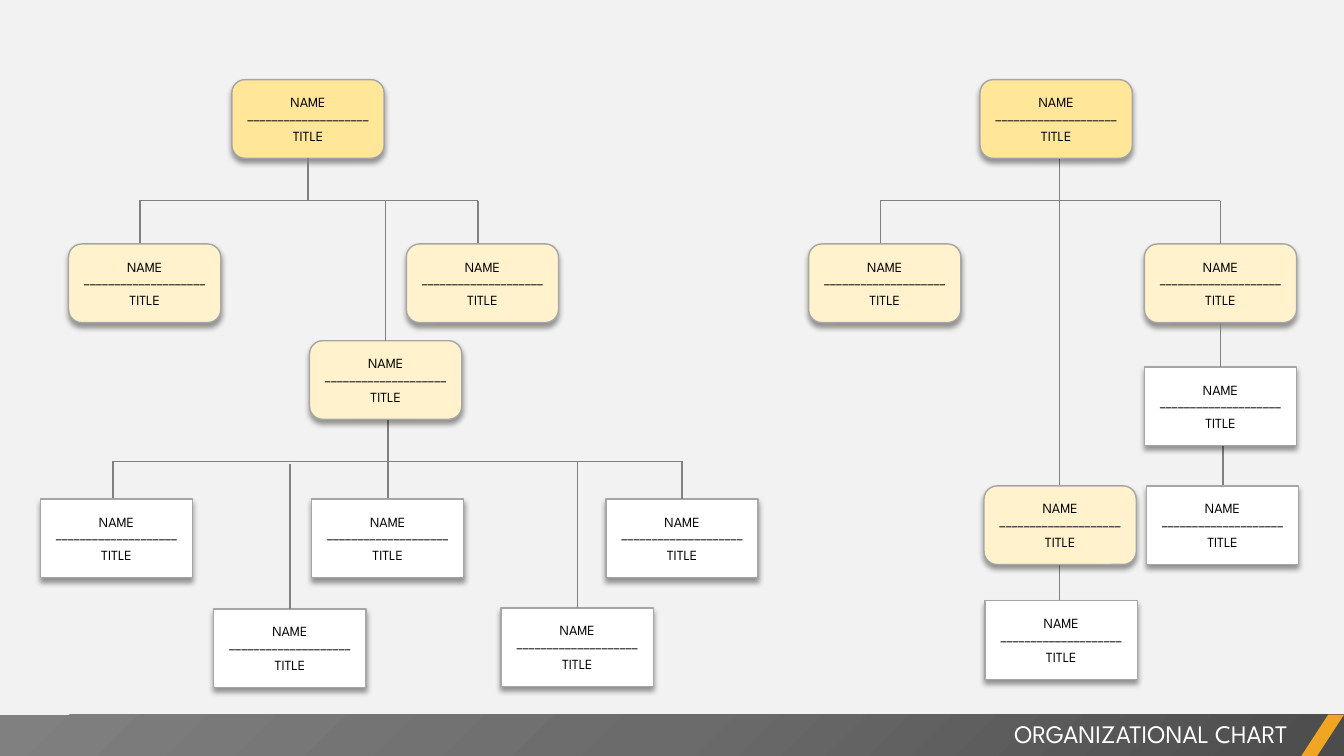
from collections import namedtuple

from pptx import Presentation
from pptx.dml.color import RGBColor
from pptx.enum.shapes import MSO_CONNECTOR, MSO_SHAPE
from pptx.enum.text import MSO_ANCHOR, MSO_AUTO_SIZE, PP_ALIGN
from pptx.oxml import parse_xml
from pptx.oxml.ns import nsdecls, qn
from pptx.util import Pt

PX = 9144  # 100 px to the inch
SLIDE_WIDTH, SLIDE_HEIGHT = 1333, 750
CARD_WIDTH, CARD_HEIGHT = 151, 78
FONT = "League Spartan"
TOP, BOTTOM = 0, 2
COLORS = {
    "page": "F2F2F2", "accent": "F0A622", "wire": "808080", "border": "A6A6A6",
    "lead": "FFE699", "manager": "FFF2CC", "staff": "FFFFFF",
    "text": "000000", "title": "FFFFFF", "shadow": "000000",
}
BAR_STOPS = {0: "4C4C4C", 50: "6B6B6B", 100: "808080"}
CARD_LINES = ("NAME", "–" * 20, "TITLE")
CARD_SHAPES = {
    "lead": MSO_SHAPE.FLOWCHART_ALTERNATE_PROCESS,
    "manager": MSO_SHAPE.FLOWCHART_ALTERNATE_PROCESS,
    "staff": MSO_SHAPE.RECTANGLE,
}

Box = namedtuple("Box", "left top width height")

# Every position is relative to the chart's box.
# wires: x1, y1, x2, y2; stems: card index, side, y of the far end;
# links: upper and lower card index.
LEFT_TREE = {
    "wires": [(98, 120, 434, 120), (99, 120, 99, 170), (434, 120, 434, 170),
              (71, 379, 637, 379), (72, 379, 72, 430), (345, 334, 345, 457)],
    "cards": [("lead", 190, 0),
              ("manager", 28, 163), ("manager", 363, 163), ("manager", 267, 259),
              ("staff", 0, 416), ("staff", 269, 416), ("staff", 561, 416),
              ("staff", 172, 525), ("staff", 457, 524)],
    "stems": [(0, BOTTOM, 119), (3, TOP, 120), (6, TOP, 379),
              (7, TOP, 381), (8, TOP, 379)],
    "links": [],
}
RIGHT_TREE = {
    "wires": [(249, 68, 249, 119), (71, 120, 408, 120), (71, 120, 71, 170),
              (249, 120, 249, 533), (411, 359, 411, 410)],
    "cards": [("lead", 170, 0),
              ("manager", 0, 163), ("manager", 333, 163), ("manager", 174, 403),
              ("staff", 333, 285), ("staff", 335, 403), ("staff", 175, 517)],
    "stems": [(2, TOP, 120)],
    "links": [(2, 4)],
}


def color(name):
    return RGBColor.from_string(COLORS[name])


def set_all(target, values):
    for name, value in values.items():
        setattr(target, name, value)


def place(shape, box):
    set_all(shape, {name: value * PX for name, value in box._asdict().items()})


def add_plain_shape(page, kind, box):
    shape = page.shapes.add_shape(kind, *(value * PX for value in box))
    shape.shadow.inherit = False
    return shape


def write_line(para, text, size, color_name, alignment):
    para.alignment = alignment
    span = para.add_run()
    span.text = text
    set_all(span.font, {"name": FONT, "size": Pt(size), "bold": False})
    span.font.color.rgb = color(color_name)


def add_card(page, role, left, top):
    box = Box(left, top, CARD_WIDTH, CARD_HEIGHT)
    card = add_plain_shape(page, CARD_SHAPES[role], box)
    card.fill.solid()
    card.fill.fore_color.rgb = color(role)
    card.line.color.rgb = color("border")
    card.line.width = Pt(1)
    effects = card._element.spPr.find(qn("a:effectLst"))
    effects.append(parse_xml(
        f'<a:outerShdw {nsdecls("a")} blurRad="{Pt(4)}" dist="{Pt(3)}" dir="5400000"'
        f' algn="t" rotWithShape="0"><a:srgbClr val="{COLORS["shadow"]}">'
        '<a:alpha val="40000"/></a:srgbClr></a:outerShdw>'))
    frame = card.text_frame
    set_all(frame, {"word_wrap": True, "vertical_anchor": MSO_ANCHOR.MIDDLE})
    set_all(frame, {f"margin_{side}": 2 * PX
                    for side in ("left", "top", "right", "bottom")})
    for index, text in enumerate(CARD_LINES):
        para = frame.add_paragraph() if index else frame.paragraphs[0]
        write_line(para, text, 10, "text", PP_ALIGN.CENTER)
    return card


def add_wire(page, x1, y1, x2, y2):
    """Add a plain line between two points given in EMU."""
    wire = page.shapes.add_connector(MSO_CONNECTOR.STRAIGHT, x1, y1, x2, y2)
    wire.line.color.rgb = color("wire")
    wire.line.width = Pt(1)
    wire._element.spPr.append(parse_xml(f'<a:effectLst {nsdecls("a")}/>'))
    return wire


def add_tree(page, box, tree):
    for x1, y1, x2, y2 in tree["wires"]:
        add_wire(page, (box.left + x1) * PX, (box.top + y1) * PX,
                 (box.left + x2) * PX, (box.top + y2) * PX)
    cards = [add_card(page, role, box.left + x, box.top + y)
             for role, x, y in tree["cards"]]
    for index, side, y in tree["stems"]:
        card = cards[index]
        middle = card.left + card.width // 2
        edge = card.top + (card.height if side == BOTTOM else 0)
        stem = add_wire(page, middle, (box.top + y) * PX, middle, edge)
        stem.end_connect(card, side)
    for upper, lower in tree["links"]:
        link = add_wire(page, 0, 0, 0, 0)
        link.begin_connect(cards[upper], BOTTOM)
        link.end_connect(cards[lower], TOP)


def add_footer(page, box):
    bar = add_plain_shape(page, MSO_SHAPE.RECTANGLE, box)
    bar.line.fill.background()
    stops = "".join(f'<a:gs pos="{position * 1000}"><a:srgbClr val="{shade}"/></a:gs>'
                    for position, shade in BAR_STOPS.items())
    bar._element.spPr.insert(2, parse_xml(
        f'<a:gradFill {nsdecls("a")} rotWithShape="1"><a:gsLst>{stops}</a:gsLst>'
        '<a:path path="circle"><a:fillToRect l="100000" t="100000"/></a:path>'
        '</a:gradFill>'))

    slash = add_plain_shape(page, MSO_SHAPE.PARALLELOGRAM,
                            Box(box.left + box.width - 43, box.top, 43, box.height))
    slash.adjustments[0] = 0.65
    slash.fill.solid()
    slash.fill.fore_color.rgb = color("accent")
    slash.line.fill.background()

    title = page.shapes.title
    page.shapes._spTree.append(title._element)  # in front of the bar
    place(title, Box(box.left + 525, box.top - 1, 762, 40))
    set_all(title.text_frame, {"word_wrap": True, "vertical_anchor": MSO_ANCHOR.TOP,
                               "auto_size": MSO_AUTO_SIZE.SHAPE_TO_FIT_TEXT})
    write_line(title.text_frame.paragraphs[0], "ORGANIZATIONAL CHART", 18,
               "title", PP_ALIGN.RIGHT)


def main():
    deck = Presentation()
    set_all(deck, {"slide_width": SLIDE_WIDTH * PX, "slide_height": SLIDE_HEIGHT * PX})
    page = deck.slides.add_slide(deck.slide_layouts.get_by_name("Title Only"))
    page.background.fill.solid()
    page.background.fill.fore_color.rgb = color("page")
    add_footer(page, Box(0, 709, SLIDE_WIDTH, 42))
    add_tree(page, Box(40, 79, 712, 603), LEFT_TREE)
    add_tree(page, Box(802, 79, 486, 595), RIGHT_TREE)
    deck.save("out.pptx")


if __name__ == "__main__":
    main()
